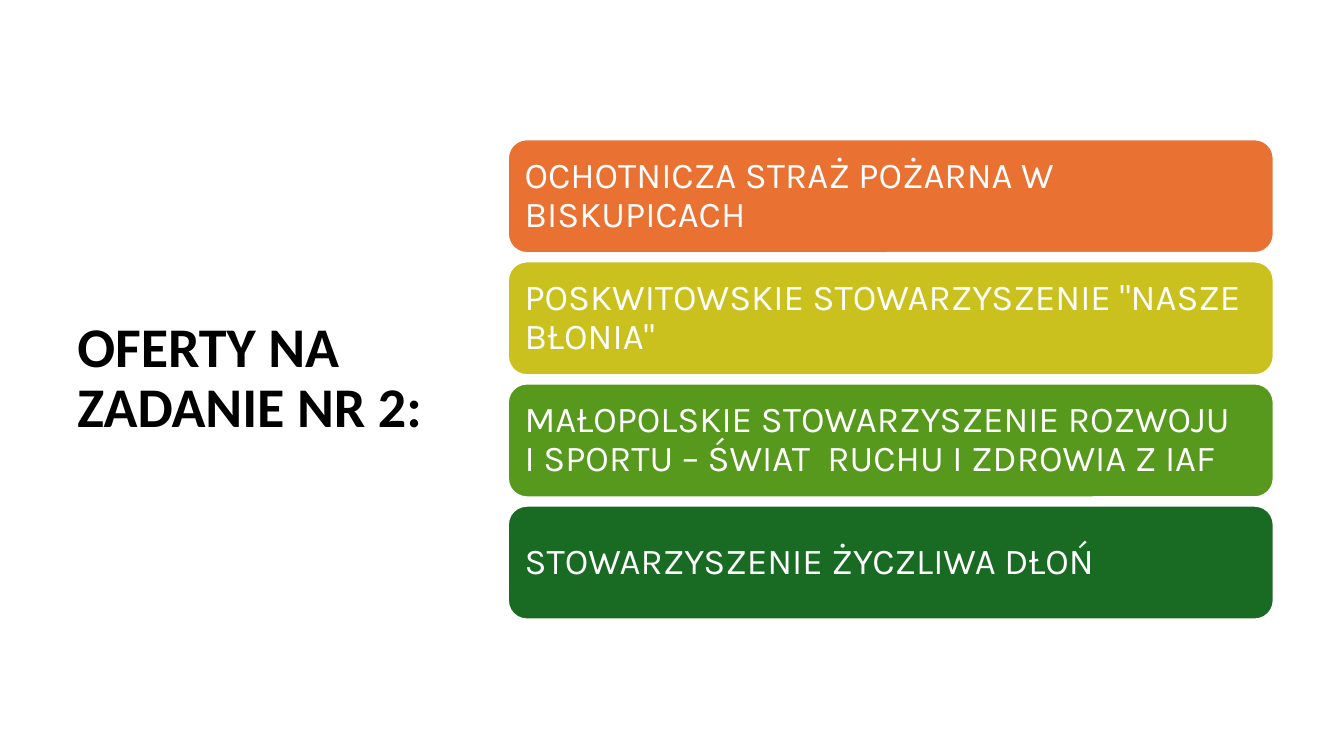
from pptx import Presentation
from pptx.dml.color import RGBColor
from pptx.enum import shapes, text
from pptx.util import Cm, Pt

BLACK = RGBColor(0x00, 0x00, 0x00)
WHITE = RGBColor(0xFF, 0xFF, 0xFF)
ORANGE = RGBColor(0xE9, 0x71, 0x32)
YELLOW = RGBColor(0xCB, 0xC1, 0x1E)
LIGHT_GREEN = RGBColor(0x56, 0x99, 0x1D)
DARK_GREEN = RGBColor(0x19, 0x6B, 0x24)

TITLE = "OFERTY NA ZADANIE NR 2:"
OFFERS = [
    ("OCHOTNICZA STRAŻ POŻARNA W BISKUPICACH", ORANGE),
    ('POSKWITOWSKIE STOWARZYSZENIE "NASZE BŁONIA"', YELLOW),
    ("MAŁOPOLSKIE STOWARZYSZENIE ROZWOJU  I SPORTU – ŚWIAT  RUCHU I ZDROWIA Z IAF",
     LIGHT_GREEN),
    ("STOWARZYSZENIE ŻYCZLIWA DŁOŃ", DARK_GREEN),
]
TITLE_FONT = {"name": "Calibri", "size": Pt(40), "bold": True}
OFFER_FONT = {"name": "Karla", "size": Pt(26), "bold": False}
INSET = Cm(0.28)
OFFER_FRAME = {"margin_left": INSET, "margin_right": INSET,
               "margin_top": INSET, "margin_bottom": INSET}


def set_all(target, values):
    for name, value in values.items():
        setattr(target, name, value)


def write(shape, wording, font, color, frame_format):
    """Put one left-aligned, vertically centred paragraph in the shape."""
    frame = shape.text_frame
    set_all(frame, {"word_wrap": True,
                    "vertical_anchor": text.MSO_ANCHOR.MIDDLE, **frame_format})
    para = frame.paragraphs[0]
    set_all(para, {"alignment": text.PP_ALIGN.LEFT, "line_spacing": 0.9})
    span = para.add_run()
    span.text = wording
    set_all(span.font, font)
    span.font.color.rgb = color


def add_title(page, left, top, width, height):
    box = page.shapes.add_textbox(left, top, width, height)
    write(box, TITLE, TITLE_FONT, BLACK, {})


def add_offers(page, left, top, width, height, gap):
    """Stack the offers as equal bars that fill the given box."""
    bar_height = (height - gap * (len(OFFERS) - 1)) // len(OFFERS)
    for row, (wording, color) in enumerate(OFFERS):
        bar = page.shapes.add_shape(
            shapes.MSO_SHAPE.ROUNDED_RECTANGLE,
            left, top + row * (bar_height + gap), width, bar_height)
        bar.shadow.inherit = False
        bar.fill.solid()
        bar.fill.fore_color.rgb = color
        bar.line.color.rgb = WHITE
        bar.line.width = Pt(1.5)
        write(bar, wording, OFFER_FONT, WHITE, OFFER_FRAME)


def main():
    deck = Presentation()
    set_all(deck, {"slide_width": Cm(33.87), "slide_height": Cm(19.05)})
    page = deck.slides.add_slide(deck.slide_layouts[6])
    add_title(page, Cm(1.7), Cm(1.52), Cm(9.7), Cm(16.08))
    add_offers(page, Cm(12.8), Cm(3.51), Cm(19.3), Cm(12.1), gap=Cm(0.21))
    deck.save("out.pptx")


if __name__ == "__main__":
    main()
